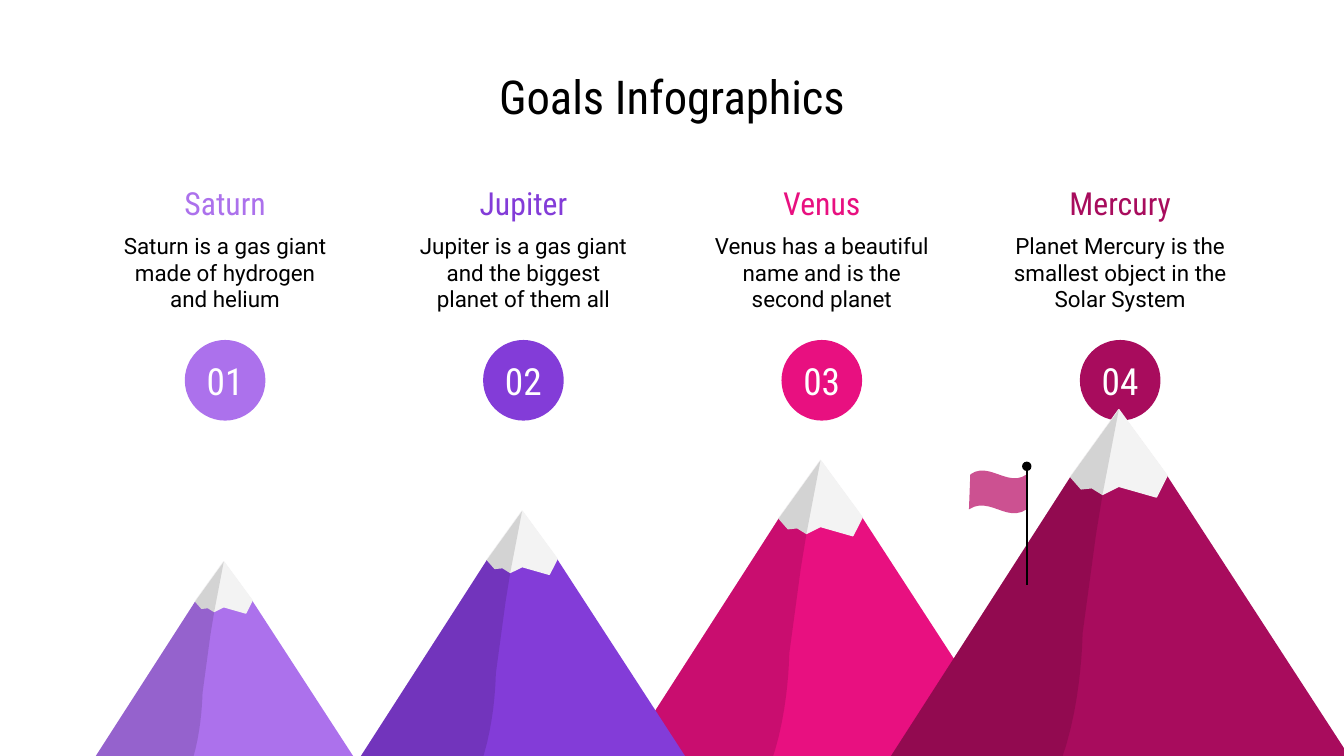
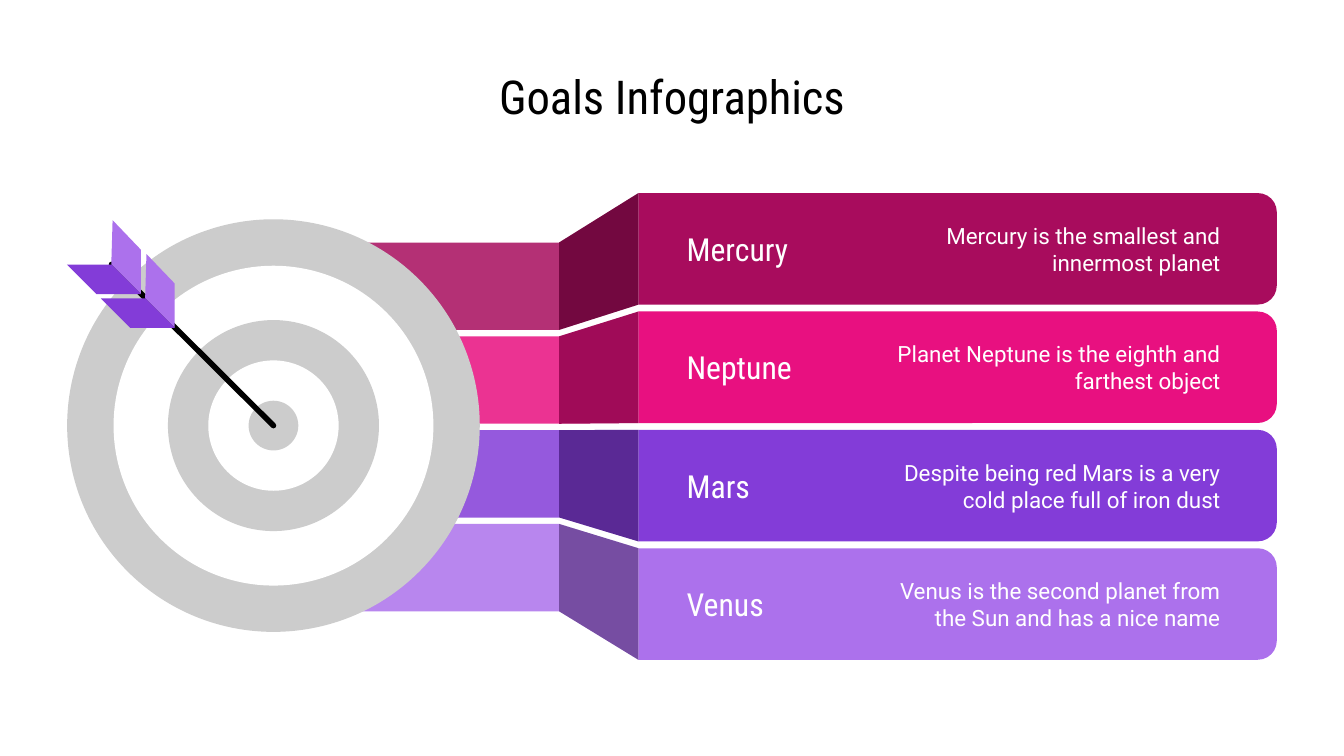
"""Builds two goal infographics: numbered mountain peaks and a target with ribbons."""
from lxml.etree import SubElement
from pptx import Presentation
from pptx.dml.color import RGBColor as Rgb
from pptx.enum.shapes import MSO_CONNECTOR as Link, MSO_SHAPE as Form
from pptx.enum.text import MSO_ANCHOR as Anchor, PP_ALIGN as Align
from pptx.oxml.ns import qn
from pptx.util import Inches, Pt

COLORS = {
    "black": "000000", "white": "FFFFFF", "snow": "F3F3F3", "ring": "CCCCCC",
    "lilac": "AC71EC", "violet": "833CD8", "pink": "E81080", "wine": "A80C5D",
    "flag": "CC5191",
}
HEADING, BODY = "Roboto Condensed", "Roboto"
COLUMNS = 100

GOALS = [
    ("Saturn", "Saturn is a gas giant made of hydrogen and helium", "lilac"),
    ("Jupiter", "Jupiter is a gas giant and the biggest planet of them all", "violet"),
    ("Venus", "Venus has a beautiful name and is the second planet", "pink"),
    ("Mercury", "Planet Mercury is the smallest object in the Solar System", "wine"),
]
RIBBONS = [
    ("Mercury", "Mercury is the smallest and innermost planet", "wine"),
    ("Neptune", "Planet Neptune is the eighth and farthest object", "pink"),
    ("Mars", "Despite being red Mars is a very cold place full of iron dust", "violet"),
    ("Venus", "Venus is the second planet from the Sun and has a nice name", "lilac"),
]


def curve(start, first, second, end, steps=12):
    return [
        tuple((1 - t) ** 3 * a + 3 * (1 - t) ** 2 * t * b + 3 * (1 - t) * t ** 2 * c + t ** 3 * d
              for a, b, c, d in zip(start, first, second, end))
        for t in (step / steps for step in range(steps + 1))
    ]


RIGHT_FACE = [(0, 0), (-13.1, 18.2), (-49.6, 100), (66.4, 100), (13.1, 17.9)]
LEFT_FACE = [(0, 0), (-13.1, 18.2), (-65.7, 100),
             *curve((-17.5, 100), (-9.9, 82.8), (-9.9, 61.3), (-9.8, 60.6)),
             (-6.2, 34), (-4.4, 23)]
SNOW_CAP = [(0, 0), (-13.1, 18.2), (-10.2, 21.5), (-7.3, 21.2), (-4.4, 23),
            (0, 20.8), (10.2, 23.7), (13.1, 17.9)]


class Infographic:
    """Holds the deck, its square grid of 100 columns, and the current page."""

    def __init__(self):
        self.deck = Presentation()
        self.deck.slide_width, self.deck.slide_height = Inches(10), Inches(5.625)
        self.cell = self.deck.slide_width / COLUMNS
        self.page = None

    def grid(self, *lengths):
        return [round(length * self.cell) for length in lengths]

    def start_page(self, title):
        self.page = self.deck.slides.add_slide(self.deck.slide_layouts[6])
        self.text(title, 5, 4.5, 90, 5.3, size=25, align=Align.CENTER)

    def label(self, shape, text, size=17, font=HEADING, color="black",
              align=Align.LEFT, side=1):
        frame = shape.text_frame
        frame.word_wrap = True
        frame.vertical_anchor = Anchor.MIDDLE
        frame.margin_left = frame.margin_right = self.grid(side)[0]
        frame.margin_top = frame.margin_bottom = self.grid(1)[0]
        para = frame.paragraphs[0]
        para.alignment = align
        span = para.add_run()
        span.text = text
        span.font.size, span.font.name = Pt(size), font
        span.font.color.rgb = Rgb.from_string(COLORS[color])

    def text(self, text, left, top, width, height, **style):
        box = self.page.shapes.add_textbox(*self.grid(left, top, width, height))
        self.label(box, text, **style)

    def paint(self, shape, color, opacity=100, outline=None):
        shape.shadow.inherit = False
        shape.fill.solid()
        shape.fill.fore_color.rgb = Rgb.from_string(COLORS[color])
        if opacity < 100:
            tone = shape._element.spPr.find(qn("a:solidFill"))[0]
            SubElement(tone, qn("a:alpha")).set("val", str(opacity * 1000))
        if outline:
            shape.line.color.rgb = Rgb.from_string(COLORS[outline])
            shape.line.width = Pt(0.75)
        else:
            shape.line.fill.background()
        return shape

    def shape(self, form, left, top, width, height, color, **look):
        box = self.page.shapes.add_shape(form, *self.grid(left, top, width, height))
        return self.paint(box, color, **look)

    def circle(self, x, y, radius, color):
        return self.shape(Form.OVAL, x - radius, y - radius, 2 * radius, 2 * radius, color)

    def outline(self, points, color, **look):
        first, *others = [self.grid(*point) for point in points]
        builder = self.page.shapes.build_freeform(*first)
        builder.add_line_segments(others, close=True)
        return self.paint(builder.convert_to_shape(), color, **look)

    def line(self, start, end, width, cap="flat"):
        link = self.page.shapes.add_connector(Link.STRAIGHT, *self.grid(*start, *end))
        link.line.color.rgb = Rgb.from_string(COLORS["black"])
        link.line.width = Pt(width)
        properties = link._element.spPr
        properties.find(qn("a:ln")).set("cap", cap)
        SubElement(properties, qn("a:effectLst"))

    def goal(self, number, center, name, detail, color):
        badge = self.circle(center, 28.3, 3, color)
        self.label(badge, f"{number:02}", size=20, color="white", align=Align.CENTER, side=0)
        left = center - 9.1
        self.text(name, left, 13.4, 18.2, 3.4, color=color, align=Align.CENTER)
        self.text(detail, left, 16.5, 18.2, 7.5, size=12, font=BODY, align=Align.CENTER)

    def mountain(self, x, top, base, color):
        def placed(points):
            scale = (base - top) / 100
            return [(x + across * scale, top + down * scale) for across, down in points]

        self.outline(placed(RIGHT_FACE), color)
        self.outline(placed(LEFT_FACE), color)
        self.outline(placed(SNOW_CAP), "snow", outline="snow")
        self.outline(placed(LEFT_FACE), "black", opacity=13)

    def flag(self):
        wave = (curve((72.1, 37.9), (73.6, 36.9), (74.9, 38.9), (76.4, 37.9))
                + curve((76.4, 35.3), (75, 36.3), (73.6, 34.3), (72.2, 35.3)))
        self.outline(wave, "flag")
        self.line((76.4, 43.5), (76.4, 34.7), 0.89)
        self.circle(76.4, 34.7, 0.35, "black")

    def ribbon(self, row, name, detail, color):
        top, tab = 14.37 + 8.81 * row, 18.05 + 6.98 * row
        edge, crease, width, height, depth = 47.5, 41.6, 47.5, 8.3, 6.5
        bar = self.shape(Form.ROUND_2_SAME_RECTANGLE, edge + (width - height) / 2,
                         top - (width - height) / 2, height, width, color)
        bar.rotation = 90
        bar.adjustments[0], bar.adjustments[1] = 0.17, 0
        self.shape(Form.RECTANGLE, 19.5, tab, crease - 19.5, depth, color, opacity=85)
        fold = [(edge, top), (crease, tab), (crease, tab + depth), (edge, top + height)]
        self.outline(fold, color)
        self.outline(fold, "black", opacity=31)
        self.text(name, 50.1, top + 2.45, 13.1, 3.4, color="white")
        self.text(detail, 63.8, top + 1.5, 28, 5.3, size=12, font=BODY,
                  color="white", align=Align.RIGHT)

    def target(self, x, y):
        for index, radius in enumerate((15.35, 11.9, 7.85, 4.85, 1.85)):
            self.circle(x, y, radius, "white" if index % 2 else "ring")
        self.line((x, y), (x - 12.05, y - 12), 3, cap="rnd")
        upper = [(10.9, 18.9), (10.8, 22.2), (13, 24.4), (13, 21.1)]
        lower = [(10.8, 22.2), (7.5, 22.2), (9.7, 24.4), (13, 24.4)]
        for vane, color in ((upper, "lilac"), (lower, "violet")):
            for shift in (0, 2.52):
                self.outline([(a - shift, b - shift) for a, b in vane], color)


def main():
    board = Infographic()
    board.start_page("Goals Infographics")
    centers = [16.75 + 22.2 * index for index in range(len(GOALS))]
    for number, (center, goal) in enumerate(zip(centers, GOALS), 1):
        board.goal(number, center, *goal)
    for index in (2, 1, 0, 3):
        board.mountain(centers[index] - 0.1, 41.8 - 3.77 * index, 57.9, GOALS[index][2])
    board.flag()

    board.start_page("Goals Infographics")
    for row, ribbon in enumerate(RIBBONS):
        board.ribbon(row, *ribbon)
    board.target(20.35, 31.67)
    board.deck.save("out.pptx")


if __name__ == "__main__":
    main()
